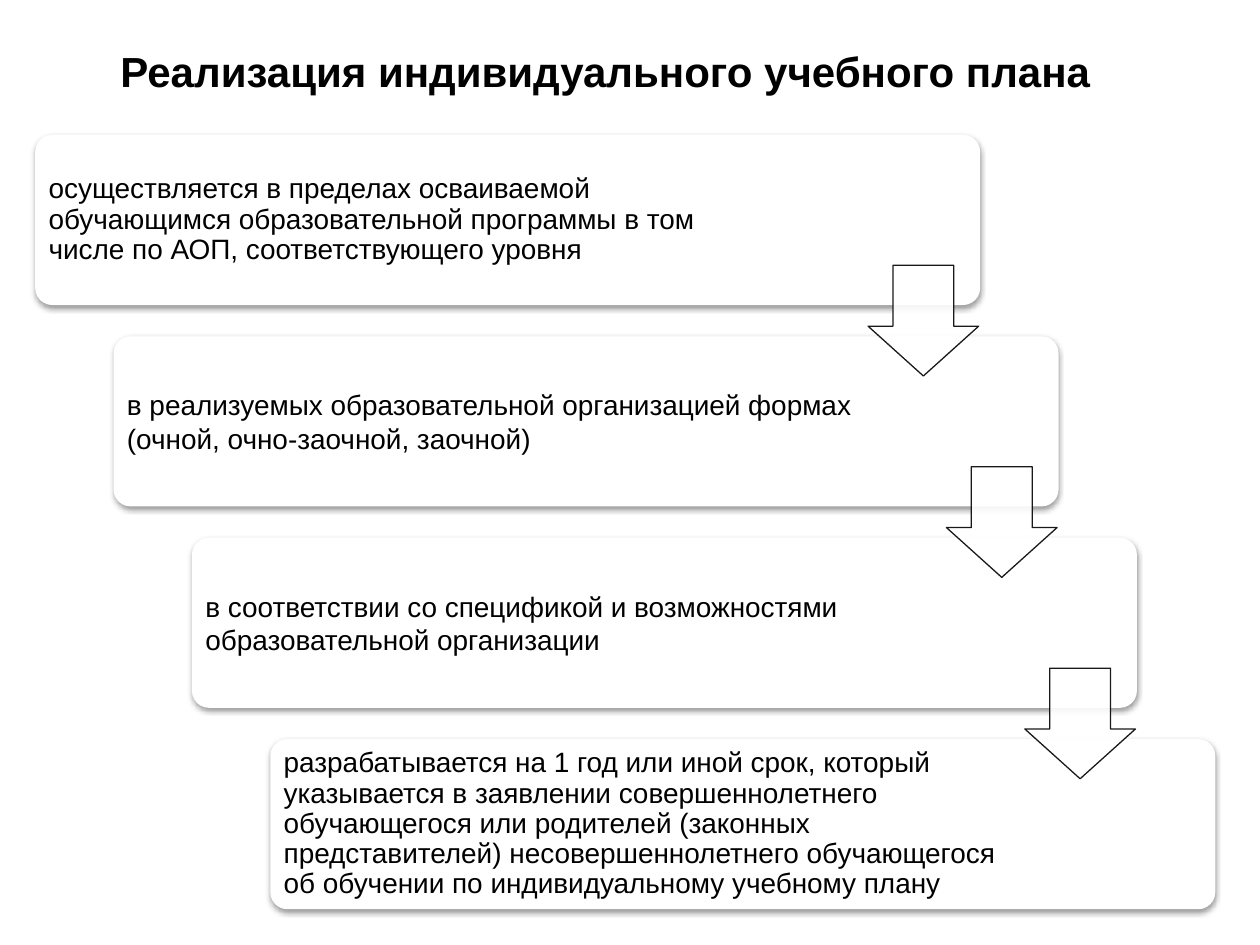
"""Builds a slide with a descending staircase of cards joined by arrows."""
from lxml import etree
from pptx import Presentation
from pptx import util as u
from pptx.dml.color import RGBColor
from pptx.enum import shapes, text
from pptx.oxml.ns import qn

COLORS = {"black": "000000", "white": "FFFFFF"}
FONT = "Arial"
STEP_X, STEP_Y = 1.58, 4.06
CARD = (0.71, 2.72, 19.05, 3.43)
LABEL = (0.81, 2.82, 15.03, 3.23)
ARROW = (17.5, 5.35, 2.23, 2.23)
TITLE = "Реализация индивидуального учебного плана"
STEPS = [
    ("осуществляется в пределах осваиваемой обучающимся образовательной "
     "программы в том числе по АОП, соответствующего уровня", 0.9),
    ("в реализуемых образовательной организацией формах "
     "(очной, очно-заочной, заочной)", 1.0),
    ("в соответствии со спецификой и возможностями "
     "образовательной организации", 1.0),
    ("разрабатывается на 1 год или иной срок, который указывается в заявлении "
     "совершеннолетнего обучающегося или родителей (законных представителей) "
     "несовершеннолетнего обучающегося об обучении по индивидуальному "
     "учебному плану", 0.9),
]


def apply(target, values):
    """Set each attribute named in values on target."""
    for name, value in values.items():
        setattr(target, name, value)


def shifted(box, index):
    """Return the box moved down the staircase by index steps, as lengths."""
    left, top, width, height = box
    return [u.Cm(round(value, 2)) for value in
            (left + index * STEP_X, top + index * STEP_Y, width, height)]


def add_alpha(parent, percent):
    """Add an opacity to every colour below parent."""
    for color in parent.iter(qn("a:srgbClr")):
        etree.SubElement(color, qn("a:alpha"), val=str(percent * 1000))


class SlideBuilder:
    """Holds the style and the current slide."""

    def __init__(self, slide):
        """Keep the slide and the shared frame format."""
        self.slide = slide
        self.frame_format = {
            "word_wrap": True,
            "auto_size": text.MSO_AUTO_SIZE.NONE,
            "vertical_anchor": text.MSO_ANCHOR.MIDDLE,
        }

    def fill_text(self, shape, wording, size, bold, paragraph_format):
        """Fill a shape with one formatted paragraph."""
        frame = shape.text_frame
        apply(frame, self.frame_format)
        paragraph = frame.paragraphs[0]
        apply(paragraph, paragraph_format)
        run = paragraph.add_run()
        run.text = wording
        apply(run.font, {"name": FONT, "size": u.Pt(size), "bold": bold})
        run.font.color.rgb = RGBColor.from_string(COLORS["black"])

    def title(self, wording):
        """Place and fill the title placeholder."""
        shape = self.slide.shapes.title
        box = {"left": 2.11, "top": 0.79, "width": 20.19, "height": 1.27}
        apply(shape, {name: u.Cm(value) for name, value in box.items()})
        self.fill_text(shape, wording, 24, True,
                       {"alignment": text.PP_ALIGN.CENTER})

    def block(self, kind, box, adjustments):
        """Add a white preset shape with the given adjustments."""
        shape = self.slide.shapes.add_shape(kind, *box)
        shape.shadow.inherit = False
        shape.fill.solid()
        shape.fill.fore_color.rgb = RGBColor.from_string(COLORS["white"])
        for index, value in enumerate(adjustments):
            shape.adjustments[index] = value
        return shape

    def card(self, index):
        """Add a rounded card with a soft shadow below."""
        shape = self.block(shapes.MSO_SHAPE.ROUNDED_RECTANGLE,
                           shifted(CARD, index), [0.1])
        shape.line.fill.background()
        effects = shape.element.spPr.find(qn("a:effectLst"))
        shadow = etree.SubElement(
            effects, qn("a:outerShdw"), blurRad=str(u.Pt(3.1)),
            dist=str(u.Pt(1.6)), dir="5400000", rotWithShape="0")
        etree.SubElement(shadow, qn("a:srgbClr"), val=COLORS["black"])
        add_alpha(shadow, 38)

    def label(self, index, wording, line_spacing):
        """Add the wording of a card."""
        shape = self.slide.shapes.add_textbox(*shifted(LABEL, index))
        margins = ("margin_left", "margin_top", "margin_right", "margin_bottom")
        apply(shape.text_frame, dict.fromkeys(margins, u.Cm(0.17)))
        self.fill_text(shape, wording, 16, False,
                       {"line_spacing": line_spacing})

    def arrow(self, index):
        """Add a translucent arrow leading to the next card."""
        shape = self.block(shapes.MSO_SHAPE.DOWN_ARROW,
                           shifted(ARROW, index), [0.55, 0.45])
        shape.line.width = u.Pt(0.75)
        shape.line.color.rgb = RGBColor.from_string(COLORS["black"])
        add_alpha(shape.element.spPr, 90)


def main():
    """Build and save the presentation."""
    presentation = Presentation()
    apply(presentation, {"slide_width": u.Cm(25.4), "slide_height": u.Cm(19.05)})
    slide = presentation.slides.add_slide(presentation.slide_layouts[5])
    builder = SlideBuilder(slide)
    builder.title(TITLE)
    for index, (wording, line_spacing) in enumerate(STEPS):
        builder.card(index)
        builder.label(index, wording, line_spacing)
    for index in range(len(STEPS) - 1):
        builder.arrow(index)
    presentation.save("out.pptx")


if __name__ == "__main__":
    main()
